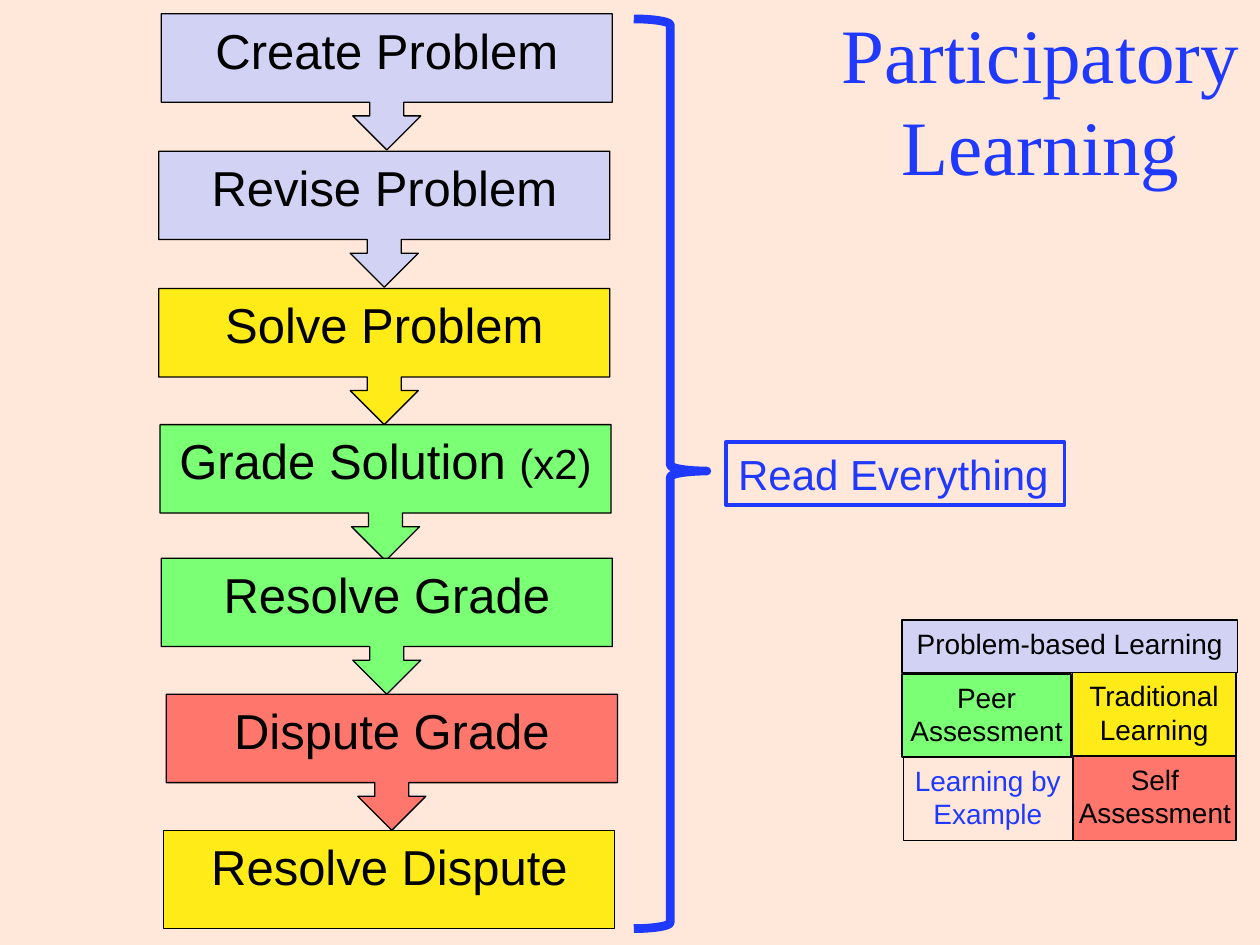
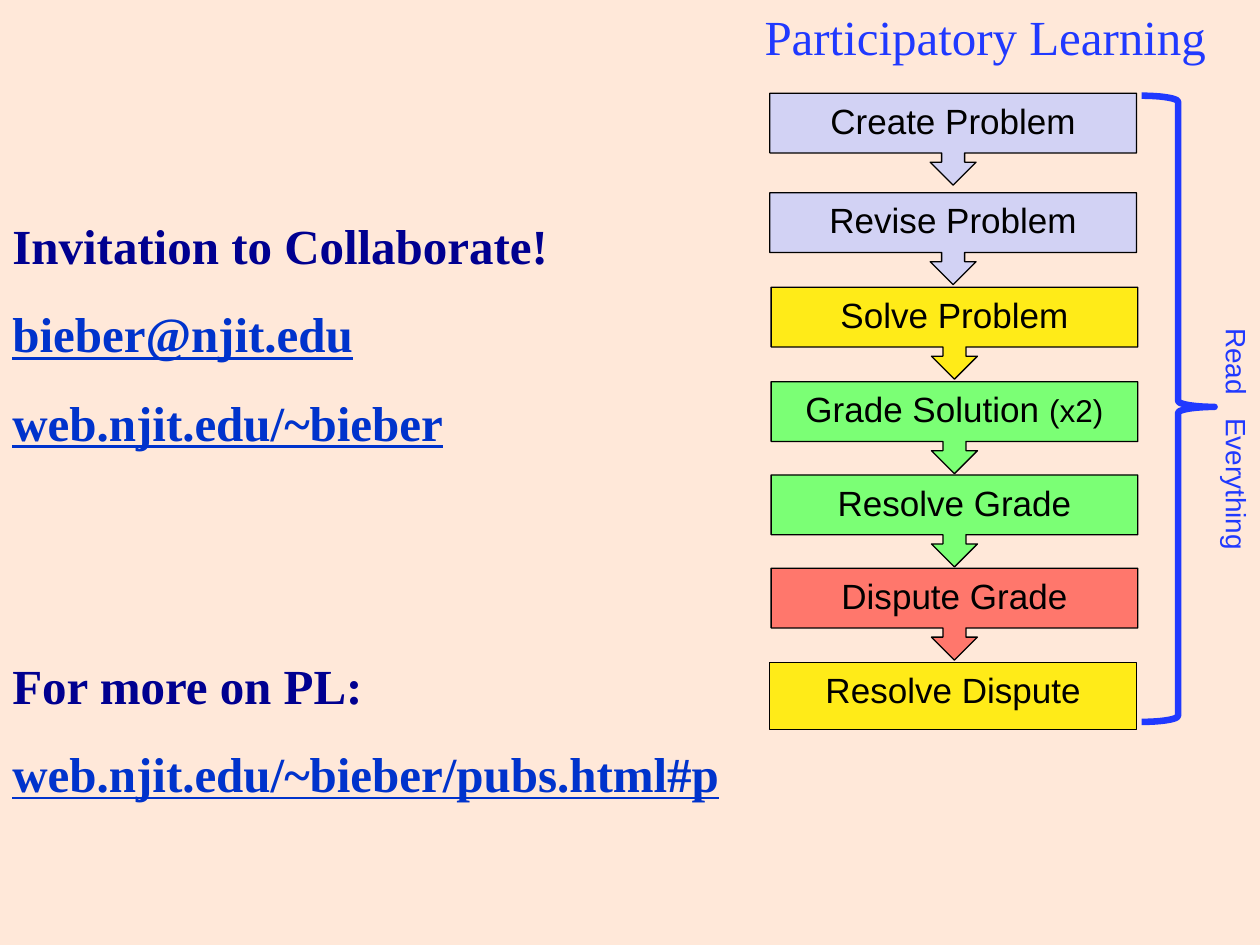
from dataclasses import dataclass

from pptx import Presentation, util as u
from pptx.dml.color import RGBColor
from pptx.enum import shapes, text
from pptx.oxml.ns import qn

PX = 9144
BACKGROUND, BLACK, BLUE = "FFE8D9", "000000", "2039FF"
NAVY, LINK = "000090", "0033CC"
LILAC, YELLOW, GREEN, RED = "D2D2F4", "FFEB18", "7BFF75", "FF776C"
SANS, SERIF = "Arial", "Times New Roman"
CALLOUT = shapes.MSO_SHAPE.DOWN_ARROW_CALLOUT
RECT = shapes.MSO_SHAPE.RECTANGLE
BRACE = shapes.MSO_SHAPE.RIGHT_BRACE
CENTER, LEFT = text.PP_ALIGN.CENTER, text.PP_ALIGN.LEFT


@dataclass(frozen=True)
class Box:
    x: int
    y: int
    w: int
    h: int

    def emu(self) -> list[int]:
        return [v * PX for v in (self.x, self.y, self.w, self.h)]


@dataclass(frozen=True)
class Run:
    text: str
    size: int
    color: str = BLACK
    font: str = SANS
    bold: bool = False
    underline: bool = False
    spread: int = 0


@dataclass(frozen=True)
class Step:
    label: str
    fill: str
    note: str = ""


@dataclass(frozen=True)
class Flow:
    lefts: tuple[int, ...]
    tops: tuple[int, ...]
    width: int
    height: int
    last_height: int
    size: int
    note_size: int
    brace: Box
    brace_line: float


@dataclass(frozen=True)
class LegendCell:
    label: str
    box: Box
    fill: str | None
    color: str = BLACK


STEPS = (
    Step("Create Problem", LILAC),
    Step("Revise Problem", LILAC),
    Step("Solve Problem", YELLOW),
    Step("Grade Solution ", GREEN, "(x2)"),
    Step("Resolve Grade", GREEN),
    Step("Dispute Grade", RED),
    Step("Resolve Dispute", YELLOW),
)
LARGE_FLOW = Flow((128, 126, 126, 127, 128, 132, 130),
                  (11, 120, 229, 337, 443, 551, 659),
                  358, 108, 78, 28, 24, Box(503, 15, 58, 722), 5)
SMALL_FLOW = Flow((611, 611, 612, 612, 612, 612, 611),
                  (74, 153, 228, 303, 377, 451, 526),
                  291, 73, 53, 20, 18, Box(906, 76, 58, 497), 3.75)
LEGEND = (
    LegendCell("Traditional Learning", Box(851, 534, 130, 66), YELLOW),
    LegendCell("Problem-based Learning", Box(716, 492, 266, 42), LILAC),
    LegendCell("Peer Assessment", Box(716, 535, 134, 66), GREEN),
    LegendCell("Learning by Example", Box(717, 601, 134, 66), None, BLUE),
    LegendCell("Self Assessment", Box(852, 600, 129, 67), RED),
)


def rgb(color: str) -> RGBColor:
    return RGBColor.from_string(color)


def add_run(p, run: Run) -> None:
    r = p.add_run()
    r.text = run.text
    f = r.font
    f.name, f.size, f.bold, f.underline = run.font, u.Pt(run.size), run.bold, run.underline
    f.color.rgb = rgb(run.color)
    if run.spread:
        r._r.get_or_add_rPr().set("spc", str(run.spread))


def write(sp, runs: list[Run], align=CENTER, side: int = 10):
    tf = sp.text_frame
    tf.word_wrap = True
    tf.vertical_anchor = text.MSO_ANCHOR.TOP
    tf.margin_left = tf.margin_right = side * PX
    tf.margin_top = tf.margin_bottom = 5 * PX
    p = tf.paragraphs[0]
    p.alignment = align
    for run in runs:
        add_run(p, run)
    return tf


def add_outline(s, kind, box: Box, fill: str | None, line: str = BLACK, weight: float = 0.75):
    sp = s.shapes.add_shape(kind, *box.emu())
    sp.shadow.inherit = False
    if fill:
        sp.fill.solid()
        sp.fill.fore_color.rgb = rgb(fill)
    else:
        sp.fill.background()
    sp.line.color.rgb = rgb(line)
    sp.line.width = u.Pt(weight)
    return sp


def add_text(s, box: Box, runs: list[Run], align=CENTER):
    return write(s.shapes.add_textbox(*box.emu()), runs, align)


def add_title(s, box: Box, size: int) -> None:
    add_text(s, box, [Run("Participatory Learning", size, BLUE, SERIF)])


def add_flow(s, flow: Flow) -> None:
    for step, x, y in zip(STEPS, flow.lefts, flow.tops):
        last = step is STEPS[-1]
        box = Box(x, y, flow.width, flow.last_height if last else flow.height)
        sp = add_outline(s, RECT if last else CALLOUT, box, step.fill)
        runs = [Run(step.label, flow.size)]
        if step.note:
            runs.append(Run(step.note, flow.note_size))
        write(sp, runs)
    brace = add_outline(s, BRACE, flow.brace, None, BLUE, flow.brace_line)
    brace.adjustments[0] = 0.083
    brace.adjustments[1] = 0.497


def add_slide(prs):
    s = prs.slides.add_slide(prs.slide_layouts[6])
    s.background.fill.solid()
    s.background.fill.fore_color.rgb = rgb(BACKGROUND)
    return s


def build_overview(prs) -> None:
    s = add_slide(prs)
    add_flow(s, LARGE_FLOW)
    add_title(s, Box(652, 0, 348, 158), 44)
    for cell in LEGEND:
        sp = add_outline(s, RECT, cell.box, cell.fill)
        write(sp, [Run(cell.label, 16, cell.color)], side=0)
    sp = add_outline(s, RECT, Box(576, 351, 269, 50), None, BLUE, 2)
    write(sp, [Run("Read Everything", 24, BLUE)], LEFT).word_wrap = False


def build_invitation(prs) -> None:
    s = add_slide(prs)
    add_flow(s, SMALL_FLOW)
    tf = add_text(s, Box(953, 250, 47, 197),
                  [Run("Read", 16, BLUE), Run(" ", 16, BLUE, spread=890),
                   Run("Everything", 16, BLUE)])
    tf._txBody.find(qn("a:bodyPr")).set("vert", "vert")
    add_title(s, Box(564, 0, 436, 57), 28)

    heading = dict(size=28, color=NAVY, font=SERIF, bold=True)
    link = dict(heading, color=LINK, underline=True)
    more = Run("For more on PL:", **heading)
    tf = add_text(s, Box(0, 143, 608, 576), [Run("Invitation to Collaborate!", **heading)], LEFT)
    for run in (Run("bieber@njit.edu", **link), Run("web.njit.edu/~bieber", **link),
                more, Run("web.njit.edu/~bieber/pubs.html#p", **link)):
        p = tf.add_paragraph()
        add_run(p, run)
        if run is more:
            p.space_before = u.Pt(100)
    for p in tf.paragraphs:
        p.line_spacing = 1.5


def main() -> None:
    prs = Presentation()
    prs.slide_width, prs.slide_height = 1000 * PX, 750 * PX
    build_overview(prs)
    build_invitation(prs)
    prs.save("out.pptx")


if __name__ == "__main__":
    main()
